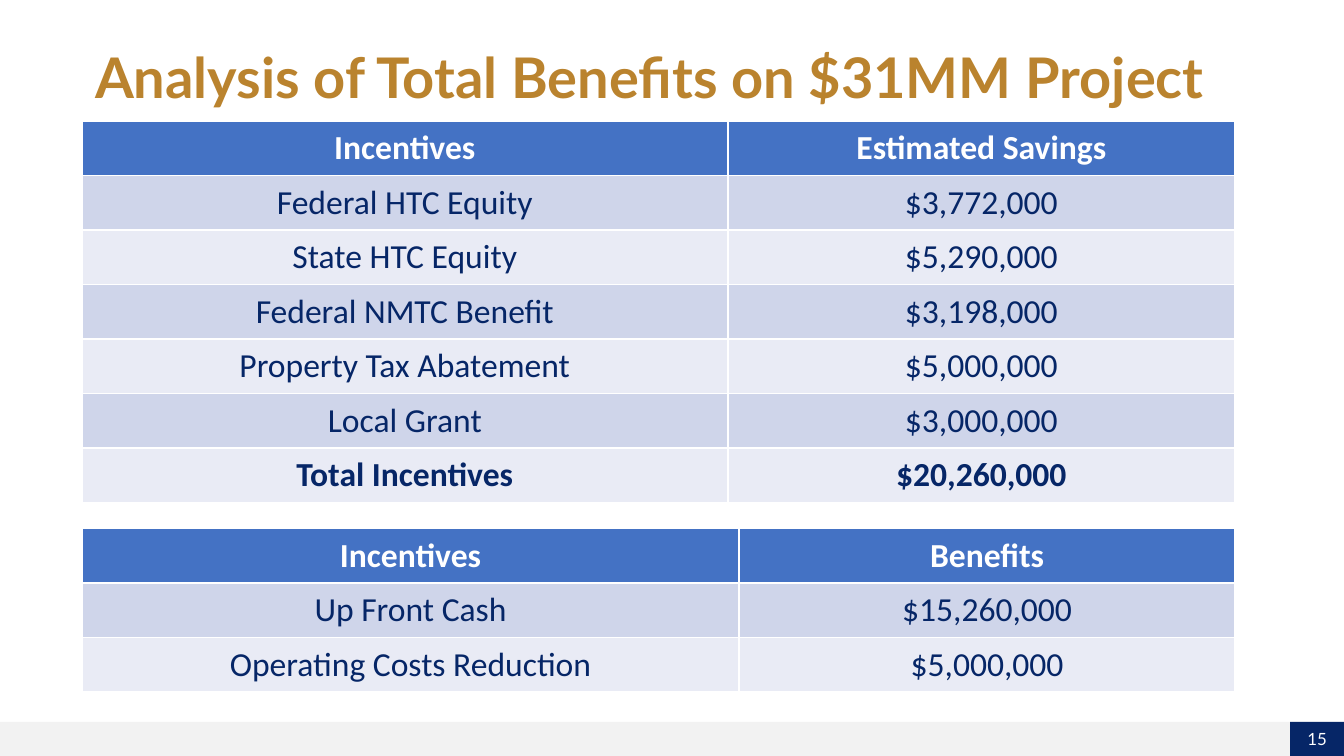
from pptx import Presentation
from pptx.dml.color import RGBColor
from pptx.enum.shapes import MSO_SHAPE
from pptx.enum.text import MSO_ANCHOR, PP_ALIGN
from pptx.util import Inches, Pt

WIDTH = Inches(10)
HEIGHT = WIDTH * 9 // 16
COLUMN, ROW = WIDTH // 100, HEIGHT // 100
TABLE_ROW = Inches(0.4) + Pt(0.4)
NAVY, GOLD, BLUE, WHITE, GREY = "062667", "BA832E", "4472C4", "FFFFFF", "F2F2F2"
BANDS = ("CFD5EA", "E9EBF5")
TITLE_FONT = {"name": "Lato", "size": Pt(30), "bold": True}
NUMBER_FONT = {"name": "Lato", "size": Pt(9), "bold": False}
CELL_FONT = {"name": "Calibri", "size": Pt(18), "bold": False}
STRONG_FONT = {**CELL_FONT, "bold": True}

SAVINGS = [
    ("Incentives", "Estimated Savings"),
    ("Federal HTC Equity", "$3,772,000"),
    ("State HTC Equity", "$5,290,000"),
    ("Federal NMTC Benefit", "$3,198,000"),
    ("Property Tax Abatement", "$5,000,000"),
    ("Local Grant", "$3,000,000"),
    ("Total Incentives", "$20,260,000"),
]
BENEFITS = [
    ("Incentives", "Benefits"),
    ("Up Front Cash", "$15,260,000"),
    ("Operating Costs Reduction", "$5,000,000"),
]


def paint(color_format, color):
    """Give a colour format the colour of a hex string."""
    color_format.rgb = RGBColor.from_string(color)


def fill_with(fill, color):
    """Make a fill solid in one colour."""
    fill.solid()
    paint(fill.fore_color, color)


def write(frame, words, font_values, color, align):
    """Write one formatted paragraph into a text frame."""
    line = frame.paragraphs[0]
    line.alignment = align
    run = line.add_run()
    run.text = words
    for attribute, value in font_values.items():
        setattr(run.font, attribute, value)
    paint(run.font.color, color)
    return line


def place(box):
    """Turn a box in grid columns and rows into lengths."""
    left, top, width, height = box
    return [round(n) for n in
            (left * COLUMN, top * ROW, width * COLUMN, height * ROW)]


def add_band(slide, box, color):
    """Add a plain rectangle without outline."""
    band = slide.shapes.add_shape(MSO_SHAPE.RECTANGLE, *place(box))
    band.shadow.inherit = False
    fill_with(band.fill, color)
    band.line.fill.background()
    return band


def add_footer(slide, box, number, number_share):
    """Add the footer strip with the page number at its right end."""
    left, top, width, height = box
    add_band(slide, box, GREY)
    number_width = width * number_share
    corner = (left + width - number_width, top, number_width, height)
    frame = add_band(slide, corner, NAVY).text_frame
    frame.word_wrap = False
    frame.vertical_anchor = MSO_ANCHOR.MIDDLE
    write(frame, number, NUMBER_FONT, WHITE, PP_ALIGN.CENTER)


def add_title(slide, box, words):
    """Add the slide title, centred vertically in its box."""
    frame = slide.shapes.add_textbox(*place(box)).text_frame
    frame.word_wrap = True
    frame.vertical_anchor = MSO_ANCHOR.MIDDLE
    write(frame, words, TITLE_FONT, GOLD, PP_ALIGN.LEFT).line_spacing = 0.9


def add_incentive_table(slide, box, entries, first_share):
    """Add a banded table with a header and bold totals."""
    left, top, width, _ = place((*box, 0))
    table = slide.shapes.add_table(
        len(entries), 2, left, top, width, TABLE_ROW * len(entries)).table
    first_width = round(width * first_share)
    for column, size in zip(table.columns, (first_width, width - first_width)):
        column.width = size
    for index, entry in enumerate(entries):
        table.rows[index].height = TABLE_ROW
        header = index == 0
        strong = header or entry[0].startswith("Total")
        for cell, words in zip(table.rows[index].cells, entry):
            fill_with(cell.fill, BLUE if header else BANDS[(index - 1) % 2])
            write(cell.text_frame, words, STRONG_FONT if strong else CELL_FONT,
                  WHITE if header else NAVY, PP_ALIGN.CENTER)


def main():
    """Build and save the slide."""
    deck = Presentation()
    deck.slide_width, deck.slide_height = WIDTH, HEIGHT
    slide = deck.slides.add_slide(deck.slide_layouts[6])
    add_footer(slide, (0, 95.5, 100, 4.5), "15", 0.04)
    add_title(slide, (6.1, 5.3, 87.8, 10.8),
              "Analysis of Total Benefits on $31MM Project")
    add_incentive_table(slide, (6.1, 16, 85.8), SAVINGS, 0.56)
    add_incentive_table(slide, (6.1, 69.9, 85.8), BENEFITS, 0.57)
    deck.save("out.pptx")


if __name__ == "__main__":
    main()
